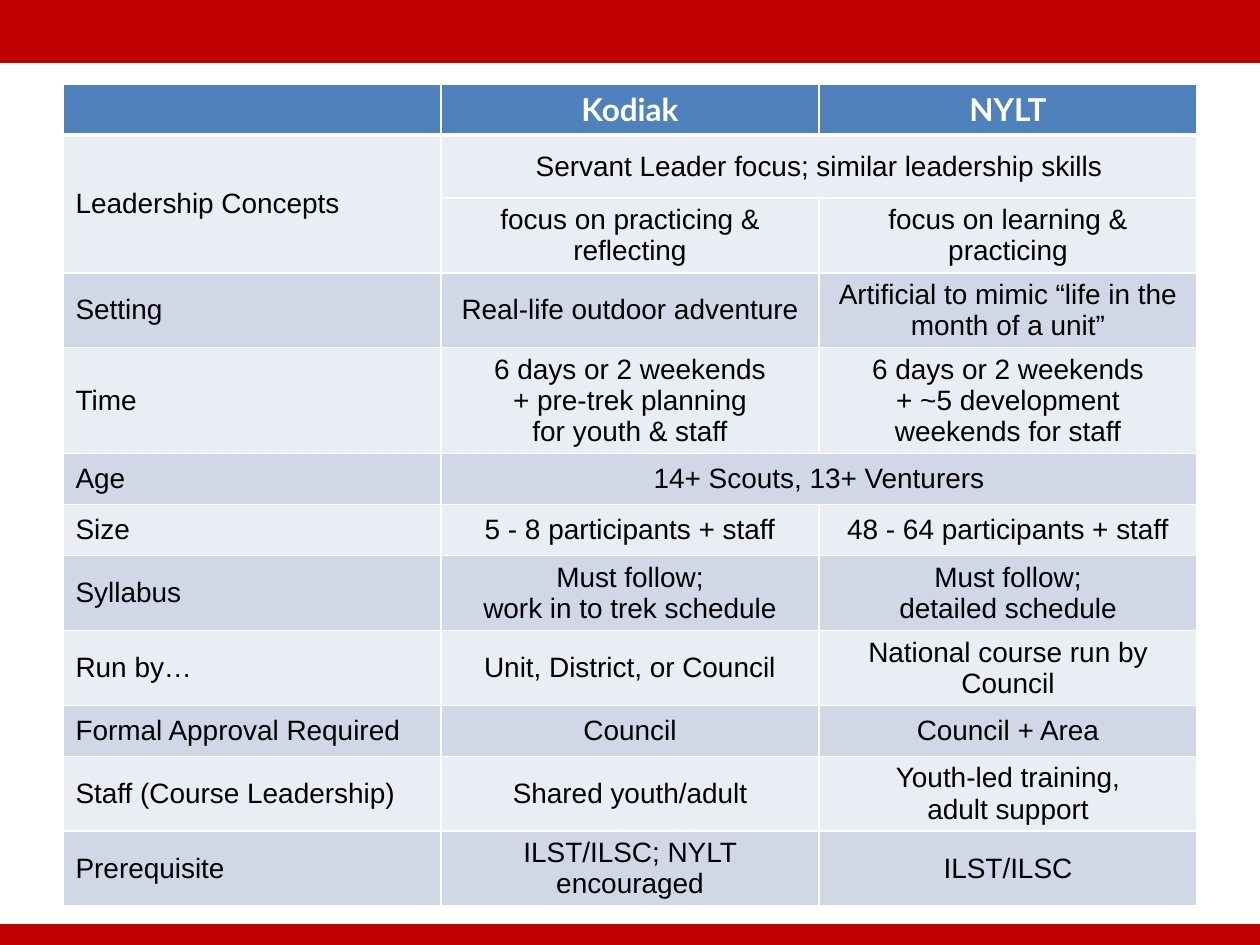
from pptx import Presentation
from pptx.dml.color import RGBColor
from pptx.enum.shapes import MSO_SHAPE
from pptx.enum.text import MSO_ANCHOR, PP_ALIGN
from pptx.oxml import parse_xml
from pptx.oxml.ns import nsdecls
from pptx.util import Pt

RED, BLUE, WHITE, BLACK = "C00000", "4F81BD", "FFFFFF", "000000"
LIGHT, DARK = "E9EDF4", "D0D8E8"
BARS = [(0, 63), (924, 21)]
LEFT, TOP, WIDE, HIGH = 63, 84, 378, 51
TALL = {1: 63, 2: 54}
ROWS = [
    ("", "Kodiak", "NYLT"),
    ("Leadership Concepts", "Servant Leader focus; similar leadership skills", ""),
    ("", "focus on practicing & reflecting", "focus on learning & practicing"),
    ("Setting", "Real-life outdoor adventure",
     "Artificial to mimic “life in the month of a unit”"),
    ("Time", "6 days or 2 weekends\n+ pre-trek planning\nfor youth & staff",
     "6 days or 2 weekends\n+ ~5 development weekends for staff"),
    ("Age", "14+ Scouts, 13+ Venturers", ""),
    ("Size", "5 - 8 participants + staff", "48 - 64 participants + staff"),
    ("Syllabus", "Must follow;\nwork in to trek schedule",
     "Must follow;\ndetailed schedule"),
    ("Run by…", "Unit, District, or Council", "National course run by Council"),
    ("Formal Approval Required", "Council", "Council + Area"),
    ("Staff (Course Leadership)", "Shared youth/adult",
     "Youth-led training,\nadult support"),
    ("Prerequisite", "ILST/ILSC; NYLT encouraged", "ILST/ILSC"),
]
SPANS = [((1, 0), (2, 0)), ((1, 1), (1, 2)), ((5, 1), (5, 2))]


def px(n):
    return round(n * 914400 / 126)


def paint(fill, tone):
    fill.solid()
    fill.fore_color.rgb = RGBColor.from_string(tone)


def edge(cell, row):
    wide = {"T": 3 if row == 1 else 1, "B": 3 if row == 0 else 1}
    for spot, side in enumerate("LRTB"):
        line = parse_xml(
            f'<a:ln{side} {nsdecls("a")} w="{Pt(wide.get(side, 1))}">'
            f'<a:solidFill><a:srgbClr val="{WHITE}"/></a:solidFill></a:ln{side}>')
        cell._tc.get_or_add_tcPr().insert(spot, line)


def style(cell, row, col, text):
    head = row == 0
    cell.text = text
    cell.vertical_anchor = MSO_ANCHOR.TOP if head else MSO_ANCHOR.MIDDLE
    band = DARK if row > 2 and row % 2 else LIGHT
    paint(cell.fill, BLUE if head else band)
    edge(cell, row)
    for para in cell.text_frame.paragraphs:
        para.alignment = PP_ALIGN.CENTER if col else PP_ALIGN.LEFT
        font = para.font
        font.name = "Lato" if head else "Arial"
        font.size = Pt(18 if head else 16)
        font.bold = head
        font.color.rgb = RGBColor.from_string(WHITE if head else BLACK)


def main():
    deck = Presentation()
    deck.slide_width, deck.slide_height = px(1260), px(945)
    slide = deck.slides.add_slide(deck.slide_layouts[6])
    for top, high in BARS:
        bar = slide.shapes.add_shape(
            MSO_SHAPE.RECTANGLE, 0, px(top), px(1260), px(high))
        bar.shadow.inherit = False
        paint(bar.fill, RED)
        bar.line.fill.background()

    sizes = [TALL.get(i, HIGH) for i in range(len(ROWS))]
    table = slide.shapes.add_table(
        len(ROWS), 3, px(LEFT), px(TOP), px(3 * WIDE), px(sum(sizes))).table
    for col in table.columns:
        col.width = px(WIDE)
    for row, texts in enumerate(ROWS):
        table.rows[row].height = px(sizes[row])
        for col, text in enumerate(texts):
            style(table.cell(row, col), row, col, text)
    for start, end in SPANS:
        table.cell(*start).merge(table.cell(*end))
    deck.save("out.pptx")


if __name__ == "__main__":
    main()
